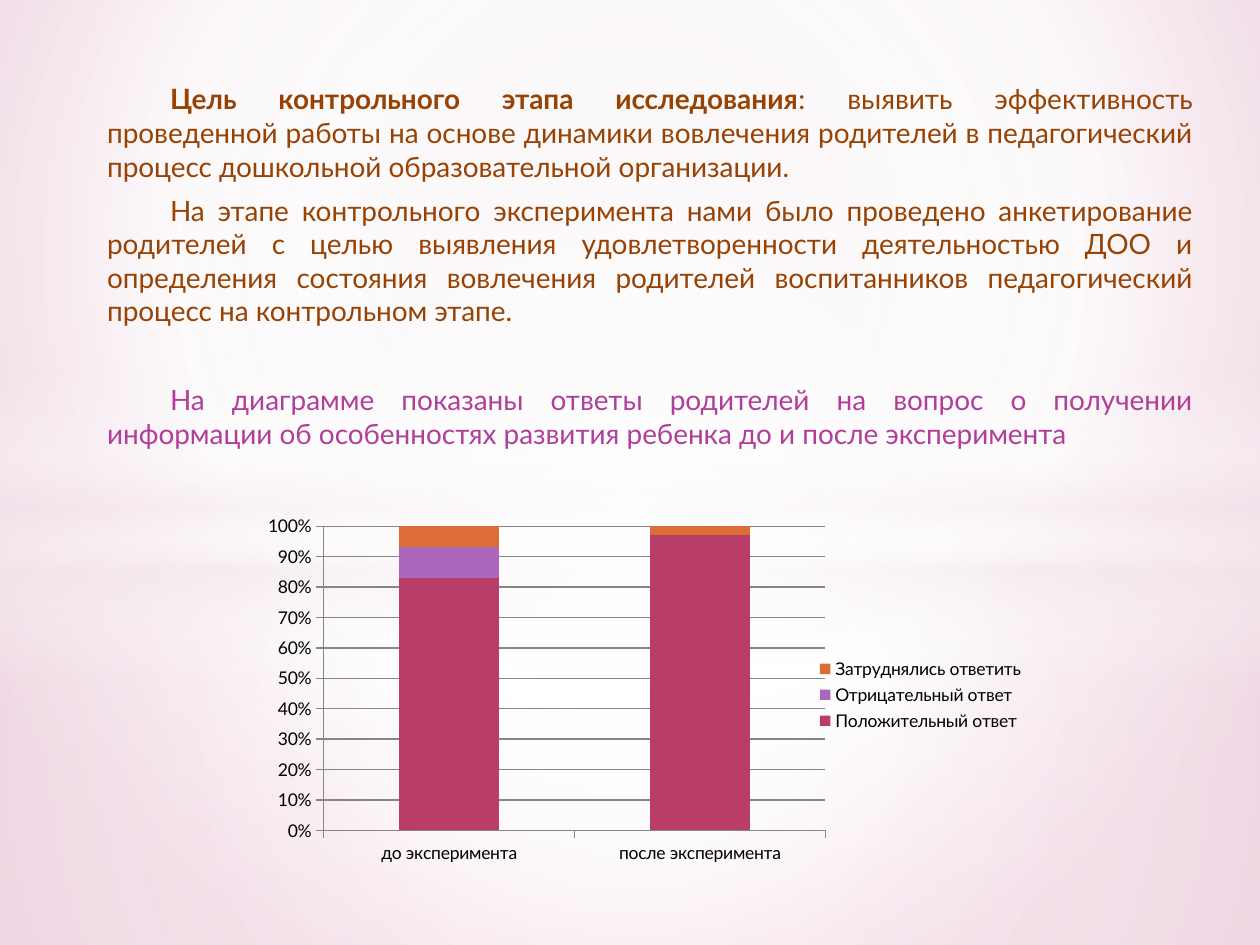
from lxml.etree import SubElement
from pptx import Presentation
from pptx.chart.data import CategoryChartData
from pptx.dml.color import RGBColor
from pptx.enum.chart import XL_CHART_TYPE, XL_LEGEND_POSITION, XL_TICK_MARK
from pptx.enum.shapes import MSO_SHAPE
from pptx.enum.text import MSO_ANCHOR, MSO_AUTO_SIZE, PP_ALIGN
from pptx.oxml.ns import qn
from pptx.util import Inches, Pt

COLOURS = {
    "white": "FFFFFF", "blush": "F4E7ED", "pale": "EDDAE2", "rose": "E09DBC",
    "brown": "984204", "purple": "B13F9A", "black": "000000", "grid": "868686",
    "yes": "B83D68", "no": "AC66BB", "unsure": "DE6C36",
}
FONT = "Lato"


def rgb(name):
    return RGBColor.from_string(COLOURS[name])


def paint_gradient(fill, owner, stops, focus=None):
    """Stops are (position, colour, opacity) in percent; no focus means top to bottom."""
    fill.gradient()
    gradient = next(owner.iter(qn("a:gradFill")))
    for child in list(gradient):
        gradient.remove(child)
    stop_list = SubElement(gradient, qn("a:gsLst"))
    for position, name, opacity in stops:
        stop = SubElement(stop_list, qn("a:gs"), pos=str(position * 1000))
        colour = SubElement(stop, qn("a:srgbClr"), val=COLOURS[name])
        if opacity < 100:
            SubElement(colour, qn("a:alpha"), val=str(opacity * 1000))
    if focus:
        circle = SubElement(gradient, qn("a:path"), path="circle")
        SubElement(circle, qn("a:fillToRect"),
                   {side: str(share * 1000) for side, share in zip("ltrb", focus)})
    else:
        SubElement(gradient, qn("a:lin"), ang="5400000", scaled="0")


deck = Presentation()
deck.slide_width, deck.slide_height = Inches(10), Inches(7.5)
slide = deck.slides.add_slide(deck.slide_layouts[0])
title, goals = slide.placeholders
title.element.getparent().remove(title.element)

# Background and its soft light layers
paint_gradient(slide.background.fill, slide.element,
               [(0, "pale", 100), (60, "white", 100), (100, "rose", 100)],
               (20, 10, 20, 60))
CENTRE = (50, 50, 50, 50)
layers = [
    (MSO_SHAPE.RECTANGLE, 4.23, 3.27, CENTRE,
     [(0, "white", 91), (37, "white", 76), (100, "blush", 79)]),
    (MSO_SHAPE.RECTANGLE, 0, 4.23, CENTRE,
     [(0, "white", 89), (48, "white", 62), (100, "blush", 79)]),
    (MSO_SHAPE.RECTANGLE, 2.9, 2.5, None,
     [(0, "white", 0), (29, "white", 30), (45, "blush", 40),
      (55, "white", 26), (65, "blush", 60), (100, "white", 0)]),
    (MSO_SHAPE.OVAL, 1.75, 5.58, CENTRE, [(0, "white", 100), (54, "white", 0)]),
]
for outline, top, height, focus, stops in layers:
    layer = slide.shapes.add_shape(outline, 0, Inches(top), deck.slide_width, Inches(height))
    layer.shadow.inherit = False
    layer.line.fill.background()
    paint_gradient(layer.fill, layer.element, stops, focus)

# Goals of the control stage, in front of the layers
slide.shapes._spTree.append(goals.element)
goals.left, goals.top = Inches(0.75), Inches(0.6)
goals.width, goals.height = Inches(8.82), Inches(5.98)
frame = goals.text_frame
for key, value in {"word_wrap": True, "auto_size": MSO_AUTO_SIZE.NONE,
                   "vertical_anchor": MSO_ANCHOR.TOP}.items():
    setattr(frame, key, value)

statements = [
    ("brown", 3, [
        ("Цель контрольного этапа исследования", True),
        (": выявить эффективность проведенной работы на основе динамики вовлечения "
         "родителей в педагогический процесс дошкольной образовательной организации.", False)]),
    ("brown", 3, [
        ("На этапе контрольного эксперимента нами было проведено анкетирование родителей "
         "с целью выявления удовлетворенности деятельностью ДОО и определения состояния "
         "вовлечения родителей воспитанников педагогический процесс на контрольном этапе.",
         False)]),
    ("purple", 28.7, [
        ("На диаграмме показаны ответы родителей на вопрос о получении информации "
         "об особенностях развития ребенка до и после эксперимента", False)]),
]
for number, (colour, gap_above, parts) in enumerate(statements):
    statement = frame.add_paragraph() if number else frame.paragraphs[0]
    for key, value in {"alignment": PP_ALIGN.JUSTIFY, "space_before": Pt(gap_above),
                       "space_after": Pt(3)}.items():
        setattr(statement, key, value)
    indents = statement._p.get_or_add_pPr()
    indents.set("marL", "0")
    indents.set("indent", str(Inches(0.5)))
    for words, bold in parts:
        run = statement.add_run()
        run.text = words
        for key, value in {"name": FONT, "size": Pt(16), "bold": bold}.items():
            setattr(run.font, key, value)
        run.font.color.rgb = rgb(colour)

# Answers before and after the experiment
answers = CategoryChartData()
answers.categories = ["до эксперимента", "после эксперимента"]
answers.add_series("Положительный ответ", (83, 97))
answers.add_series("Отрицательный ответ", (10, None))
answers.add_series("Затруднялись ответить", (7, 3))
chart = slide.shapes.add_chart(XL_CHART_TYPE.COLUMN_STACKED_100, Inches(2.01), Inches(4.06),
                               Inches(6.22), Inches(2.91), answers).chart
chart.has_title = False
chart.font.name, chart.font.size = FONT, Pt(10)
chart.font.color.rgb = rgb("black")
chart.has_legend = True
chart.legend.position = XL_LEGEND_POSITION.RIGHT
chart.legend.include_in_layout = False

columns = chart.plots[0]
for key, value in {"gap_width": 150, "overlap": 100, "vary_by_categories": False}.items():
    setattr(columns, key, value)
for series, colour in zip(columns.series, ("yes", "no", "unsure")):
    series.format.fill.solid()
    series.format.fill.fore_color.rgb = rgb(colour)

shares = chart.value_axis
shares.has_major_gridlines = True
shares.major_unit = 0.1
shares.tick_labels.number_format = "0%"
shares.tick_labels.number_format_is_linked = False
for axis in (chart.category_axis, shares):
    axis.major_tick_mark = XL_TICK_MARK.OUTSIDE
    axis.minor_tick_mark = XL_TICK_MARK.NONE
for rule in (chart.category_axis.format.line, shares.format.line,
             shares.major_gridlines.format.line):
    rule.color.rgb = rgb("grid")
    rule.width = Pt(0.75)

# Fixed inner plot area, as shares of the chart
plot_area = next(chart._chartSpace.iter(qn("c:plotArea")))
for old_layout in plot_area.findall(qn("c:layout")):
    plot_area.remove(old_layout)
layout = plot_area.makeelement(qn("c:layout"))
plot_area.insert(0, layout)
manual = SubElement(layout, qn("c:manualLayout"))
for tag, value in {"layoutTarget": "inner", "xMode": "edge", "yMode": "edge",
                   "x": 0.09, "y": 0.04, "w": 0.64, "h": 0.83}.items():
    SubElement(manual, qn(f"c:{tag}"), val=str(value))

deck.save("out.pptx")
